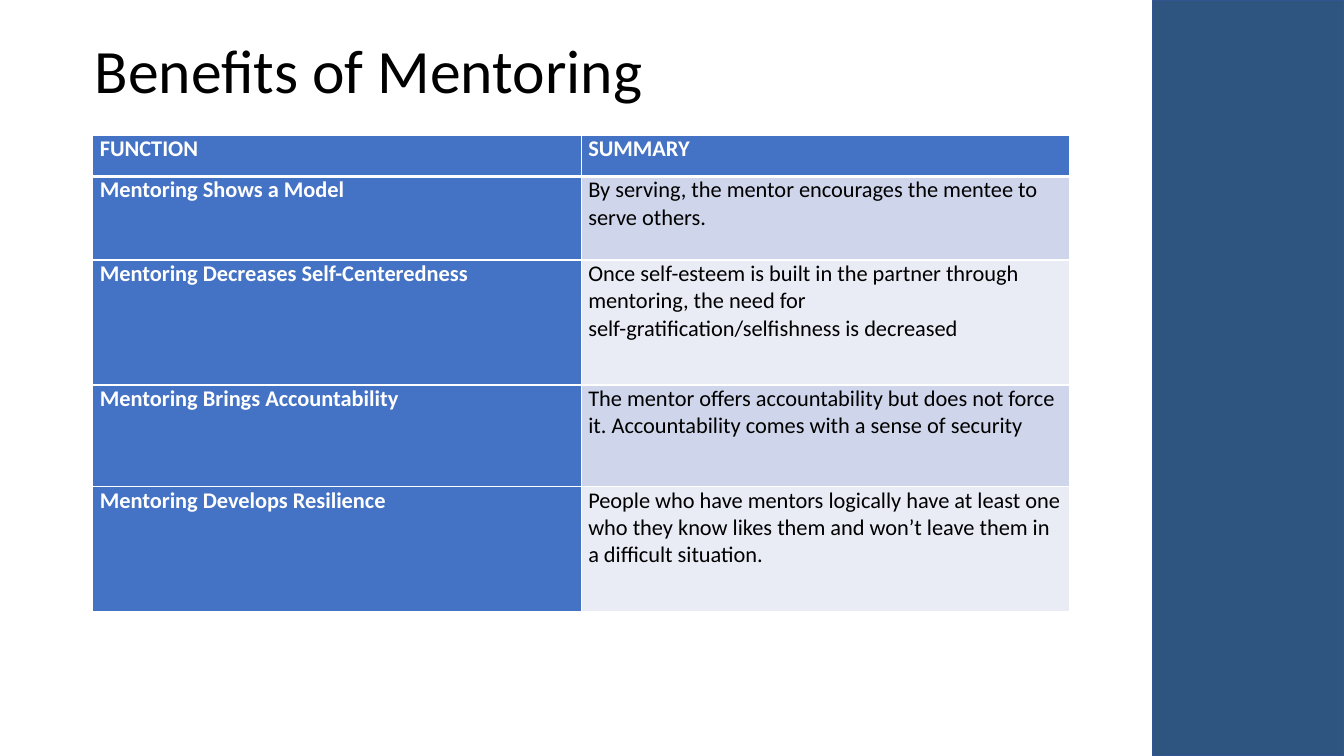
from lxml.etree import SubElement
from pptx import Presentation
from pptx.dml.color import RGBColor
from pptx.enum.shapes import MSO_SHAPE as Shape
from pptx.enum.text import MSO_ANCHOR as Anchor, PP_ALIGN as Align
from pptx.oxml.ns import qn
from pptx.util import Inches, Pt

FONT = "Calibri"
WHITE, BLACK, BLUE = "FFFFFF", "000000", "4472C4"
BANDS = ("CFD5EA", "E9EBF5")
ROW_HEIGHTS = (0.41, 0.83, 1.24, 1.01, 1.24)
BENEFITS = (
    ("FUNCTION", "SUMMARY"),
    ("Mentoring Shows a Model",
     "By serving, the mentor encourages the mentee to serve others."),
    ("Mentoring Decreases Self-Centeredness",
     "Once self-esteem is built in the partner through mentoring, "
     "the need for self-gratification/selfishness is decreased"),
    ("Mentoring Brings Accountability",
     "The mentor offers accountability but does not force it. "
     "Accountability comes with a sense of security"),
    ("Mentoring Develops Resilience",
     "People who have mentors logically have at least one who they know "
     "likes them and won’t leave them in a difficult situation."),
)


def color(value):
    """Return the colour for a hex string."""
    return RGBColor.from_string(value)


def format_text(paragraph, size, text_color, bold=False):
    """Set font, size, colour and weight of every run."""
    for run in paragraph.runs:
        run.font.name = FONT
        run.font.size = Pt(size)
        run.font.bold = bold
        run.font.color.rgb = color(text_color)


def add_side_band(slide, left, top, width, height):
    """Draw the blue band at the right edge."""
    band = slide.shapes.add_shape(
        Shape.RECTANGLE, Inches(left), Inches(top), Inches(width), Inches(height))
    band.shadow.inherit = False
    band.fill.solid()
    band.fill.fore_color.rgb = color("2E557F")
    band.line.color.rgb = color("325491")
    band.line.width = Pt(1)


def add_title(slide, left, top, width, height):
    """Place the slide title in its placeholder."""
    title = slide.shapes.title
    title.left, title.top = Inches(left), Inches(top)
    title.width, title.height = Inches(width), Inches(height)
    text_frame = title.text_frame
    text_frame.text = "Benefits of Mentoring"
    text_frame.vertical_anchor = Anchor.MIDDLE
    paragraph = text_frame.paragraphs[0]
    paragraph.alignment = Align.LEFT
    paragraph.line_spacing = 0.9
    format_text(paragraph, 44, BLACK)


def set_borders(cell, top, bottom):
    """Give a cell white borders, with top and bottom widths in points."""
    properties = cell._tc.get_or_add_tcPr()
    for side, width in (("L", 1), ("R", 1), ("T", top), ("B", bottom)):
        line = SubElement(properties, qn(f"a:ln{side}"), w=str(Pt(width)))
        fill = SubElement(line, qn("a:solidFill"))
        SubElement(fill, qn("a:srgbClr"), val=WHITE)


def fill_cell(cell, text, row, column):
    """Write and style one cell according to its row and column."""
    heading = row == 0 or column == 0
    cell.margin_left = cell.margin_right = Inches(0.07)
    cell.margin_top = cell.margin_bottom = 0
    set_borders(cell, 3 if row == 1 else 1, 3 if row == 0 else 1)
    cell.fill.solid()
    cell.fill.fore_color.rgb = color(BLUE if heading else BANDS[(row - 1) % 2])
    cell.text_frame.text = text
    format_text(cell.text_frame.paragraphs[0], 16, WHITE if heading else BLACK, heading)


def add_benefits_table(slide, left, top, width):
    """Build the table of mentoring functions and summaries."""
    table = slide.shapes.add_table(
        len(BENEFITS), 2, Inches(left), Inches(top),
        Inches(width), Inches(sum(ROW_HEIGHTS))).table
    for row, texts in enumerate(BENEFITS):
        table.rows[row].height = Inches(ROW_HEIGHTS[row])
        for column, text in enumerate(texts):
            fill_cell(table.cell(row, column), text, row, column)


def main():
    """Build and save the presentation."""
    presentation = Presentation()
    presentation.slide_width = Inches(13.33)
    presentation.slide_height = Inches(7.5)
    slide = presentation.slides.add_slide(presentation.slide_layouts[5])
    add_side_band(slide, 11.43, 0, 1.9, 7.5)
    add_title(slide, 0.84, 0, 10.01, 1.45)
    add_benefits_table(slide, 0.92, 1.34, 9.69)
    presentation.save("out.pptx")


if __name__ == "__main__":
    main()
